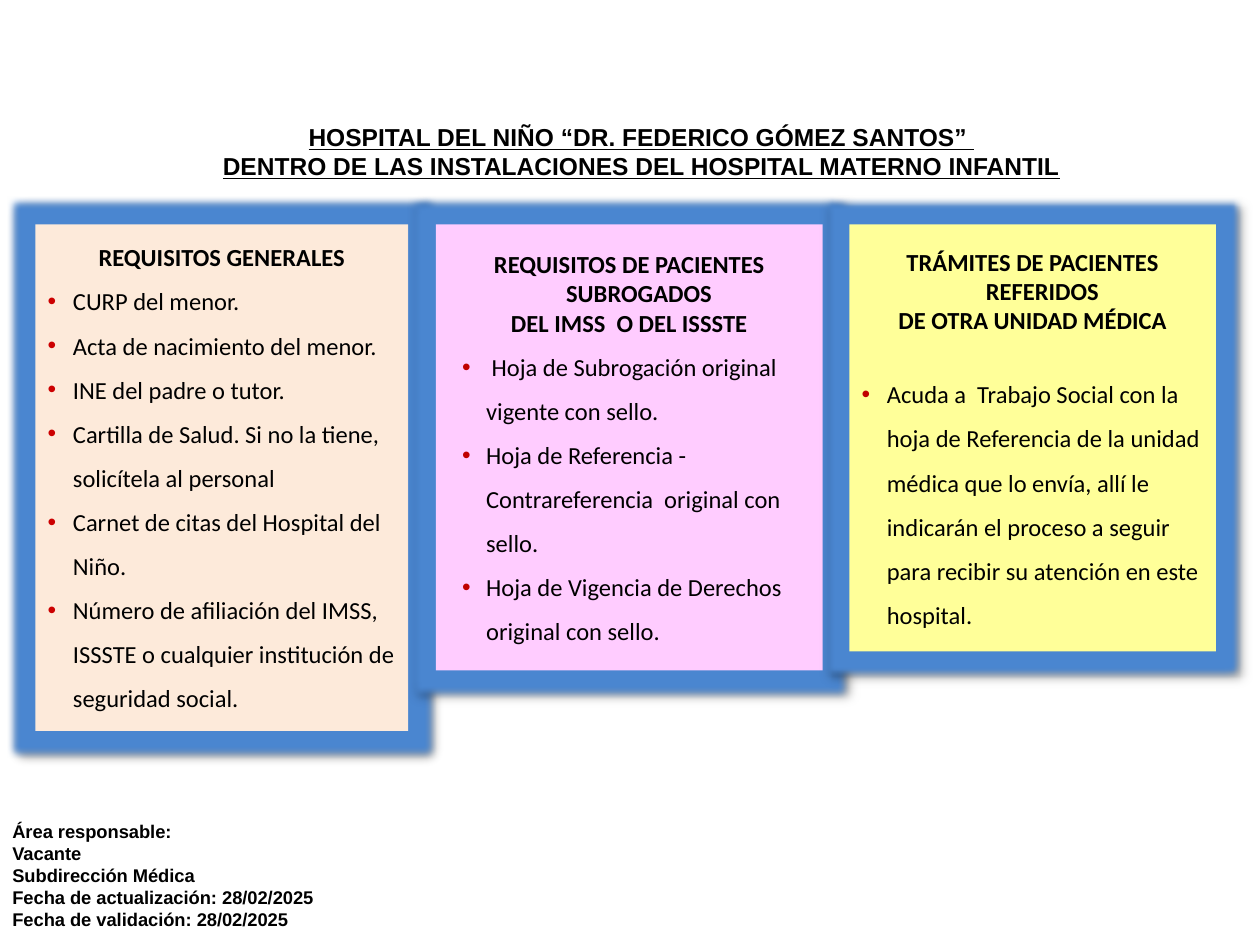
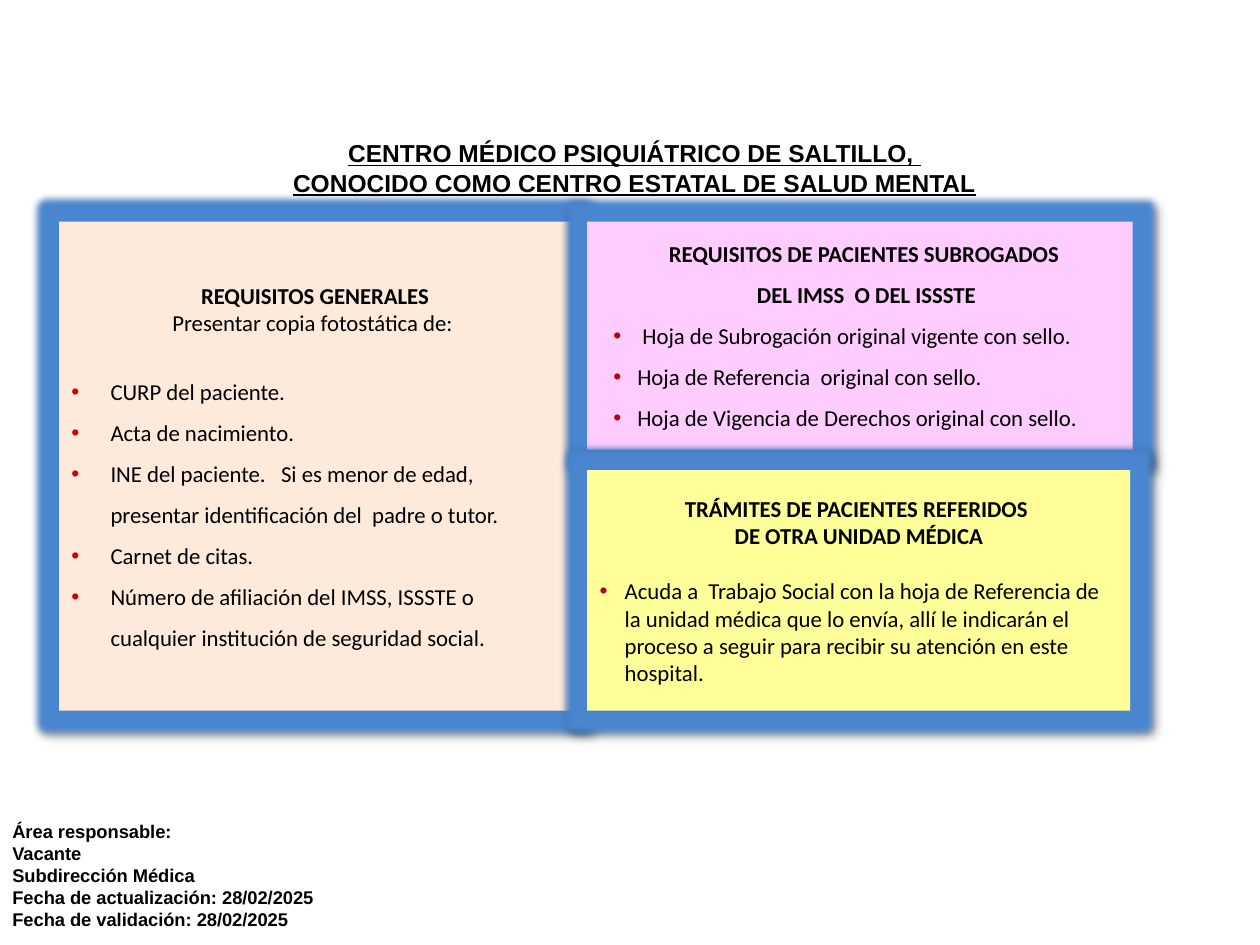
"""Build two slides listing hospital admission requirements."""
from lxml.etree import SubElement
from pptx import Presentation
from pptx.dml.color import RGBColor
from pptx.enum.shapes import MSO_SHAPE
from pptx.enum.text import MSO_ANCHOR, PP_ALIGN
from pptx.oxml.ns import qn
from pptx.util import Pt

BLACK = RGBColor(0x00, 0x00, 0x00)
PEACH = RGBColor(0xFD, 0xEA, 0xDA)
PINK = RGBColor(0xFF, 0xCC, 0xFF)
YELLOW = RGBColor(0xFF, 0xFF, 0x99)
GLOW_BLUE = RGBColor(0x4A, 0x86, 0xD0)
BRIGHT_RED = RGBColor(0xCC, 0x00, 0x00)
DARK_RED = RGBColor(0xC0, 0x00, 0x00)

FOOTER = [
    "Área responsable:",
    "Vacante",
    "Subdirección Médica",
    "Fecha de actualización: 28/02/2025",
    "Fecha de validación: 28/02/2025",
]
FOOTER_PLACE = (0, 465.1, 266.4, 70.6)

GENERAL = "REQUISITOS GENERALES"
SUBROGATED = ["REQUISITOS DE PACIENTES SUBROGADOS ", "DEL IMSS  O DEL ISSSTE"]
SUBROGATION_SHEET = " Hoja de Subrogación original vigente con sello."
VALIDITY_SHEET = "Hoja de Vigencia de Derechos original con sello."
AFFILIATION = ("Número de afiliación del IMSS, ISSSTE o cualquier institución "
               "de seguridad social.")
REFERRED = ["TRÁMITES DE PACIENTES REFERIDOS ", "DE OTRA UNIDAD MÉDICA"]
REFERRAL_STEPS = ("Acuda a  Trabajo Social con la hoja de Referencia de la unidad "
                  "médica que lo envía, allí le indicarán el proceso a seguir para "
                  "recibir su atención en este hospital.")

SLIDES = [
    {
        "title": ["HOSPITAL DEL NIÑO “DR. FEDERICO GÓMEZ SANTOS” ",
                  "DENTRO DE LAS INSTALACIONES DEL HOSPITAL MATERNO INFANTIL"],
        "title_place": (82.8, 66.2, 567.4, 51.1),
        "size": 14,
        "cards": [
            {
                "place": (20.2, 128.2, 213.1, 289.4), "fill": PEACH,
                "heading": [GENERAL], "bullet_color": BRIGHT_RED,
                "bullets": [
                    "CURP del menor.",
                    "Acta de nacimiento del menor.",
                    "INE del padre o tutor.",
                    "Cartilla de Salud. Si no la tiene, solicítela al personal",
                    "Carnet de citas del Hospital del Niño.",
                    AFFILIATION,
                ],
            },
            {
                "place": (249.1, 128.2, 221, 254.9), "fill": PINK,
                "heading": SUBROGATED, "bullet_indent": (21.6, -13.7),
                "bullets": [
                    SUBROGATION_SHEET,
                    "Hoja de Referencia - Contrareferencia  original con sello.",
                    VALIDITY_SHEET,
                ],
            },
            {
                "place": (485.3, 128.2, 209.5, 244.1), "fill": YELLOW,
                "heading": REFERRED, "gap": 17, "bullets": [REFERRAL_STEPS],
            },
        ],
    },
    {
        "title": ["CENTRO MÉDICO PSIQUIÁTRICO DE SALTILLO, ",
                  "CONOCIDO COMO CENTRO ESTATAL DE SALUD MENTAL"],
        "title_place": (31, 75.6, 663.1, 41),
        "size": 13,
        "cards": [
            {
                "place": (33.8, 126.7, 292.3, 279.4), "fill": PEACH,
                "heading": [GENERAL], "note": "Presentar copia fotostática de: ",
                "gap": 16, "bullet_indent": (22.3, -22.3),
                "bullet_color": BRIGHT_RED,
                "bullets": [
                    "CURP del paciente.",
                    "Acta de nacimiento.",
                    "INE del paciente.   Si es menor de edad,  presentar "
                    "identificación del  padre o tutor.",
                    "Carnet de citas.",
                    AFFILIATION,
                ],
            },
            {
                "place": (335.5, 126.7, 311.8, 130.3), "fill": PINK,
                "heading": SUBROGATED, "heading_indent": (7.2, 0),
                "heading_spacing": 1.5, "bullet_indent": (21.6, -13.7),
                "bullets": [
                    SUBROGATION_SHEET,
                    "Hoja de Referencia  original con sello.",
                    VALIDITY_SHEET,
                ],
            },
            {
                "place": (335.5, 268.6, 310.3, 137.5), "fill": YELLOW,
                "heading": REFERRED, "gap": 16, "bullet_spacing": 1,
                "bullets": [REFERRAL_STEPS],
            },
        ],
    },
]


def next_paragraph(text_frame):
    first = text_frame.paragraphs[0]
    return text_frame.add_paragraph() if first.runs else first


def add_line(text_frame, text, font_name, size, bold=False, underline=False,
             align=PP_ALIGN.LEFT, indent=(0, 0), spacing=1, gap=0, bullet=None):
    paragraph = next_paragraph(text_frame)
    properties = paragraph._p.get_or_add_pPr()
    properties.set("marL", str(Pt(indent[0])))
    properties.set("indent", str(Pt(indent[1])))
    if bullet is not None:
        color = SubElement(properties, qn("a:buClr"))
        SubElement(color, qn("a:srgbClr"), val=str(bullet))
        SubElement(properties, qn("a:buFont"), typeface="Arial")
        SubElement(properties, qn("a:buChar"), char="•")
    paragraph.alignment = align
    paragraph.line_spacing = spacing
    if gap:
        paragraph.space_before = Pt(gap)
    run = paragraph.add_run()
    run.text = text
    run.font.name = font_name
    run.font.size = Pt(size)
    run.font.bold = bold
    run.font.underline = underline
    run.font.color.rgb = BLACK


def add_text_box(slide, place, lines, size, **style):
    box = slide.shapes.add_textbox(*map(Pt, place))
    box.text_frame.word_wrap = True
    for line in lines:
        add_line(box.text_frame, line, "Arial", size, bold=True, **style)


def add_glow_and_shadow(shape):
    shape.shadow.inherit = False
    effects = shape._element.spPr.find(qn("a:effectLst"))
    glow = SubElement(effects, qn("a:glow"), rad=str(Pt(8)))
    SubElement(glow, qn("a:srgbClr"), val=str(GLOW_BLUE))
    shadow = SubElement(effects, qn("a:outerShdw"), blurRad=str(Pt(4)),
                        dist=str(Pt(3)), dir="2700000", algn="tl", rotWithShape="0")
    color = SubElement(shadow, qn("a:srgbClr"), val=str(BLACK))
    SubElement(color, qn("a:alpha"), val="40000")


def add_card(slide, card, size):
    shape = slide.shapes.add_shape(MSO_SHAPE.RECTANGLE, *map(Pt, card["place"]))
    shape.fill.solid()
    shape.fill.fore_color.rgb = card["fill"]
    shape.line.fill.background()
    add_glow_and_shadow(shape)
    text_frame = shape.text_frame
    text_frame.word_wrap = True
    text_frame.vertical_anchor = MSO_ANCHOR.MIDDLE

    hanging = (14.4, -14.4)
    heading_indent = card.get("heading_indent", hanging)
    for index, line in enumerate(card["heading"]):
        add_line(text_frame, line, "Calibri", size, bold=True,
                 align=PP_ALIGN.CENTER, indent=heading_indent,
                 spacing=card.get("heading_spacing", 1) if index else 1)
    if "note" in card:
        add_line(text_frame, card["note"], "Calibri", size,
                 align=PP_ALIGN.CENTER, indent=heading_indent)
    for index, line in enumerate(card["bullets"]):
        add_line(text_frame, line, "Calibri", size,
                 indent=card.get("bullet_indent", hanging),
                 spacing=card.get("bullet_spacing", 1.5),
                 gap=0 if index else card.get("gap", 0),
                 bullet=card.get("bullet_color", DARK_RED))


def main():
    presentation = Presentation()
    presentation.slide_width = Pt(720)
    presentation.slide_height = Pt(540)
    for content in SLIDES:
        slide = presentation.slides.add_slide(presentation.slide_layouts[6])
        add_text_box(slide, FOOTER_PLACE, FOOTER, 10.5)
        for card in content["cards"]:
            add_card(slide, card, content["size"])
        add_text_box(slide, content["title_place"], content["title"], 14,
                     underline=True, align=PP_ALIGN.CENTER)
    presentation.save("out.pptx")


if __name__ == "__main__":
    main()
